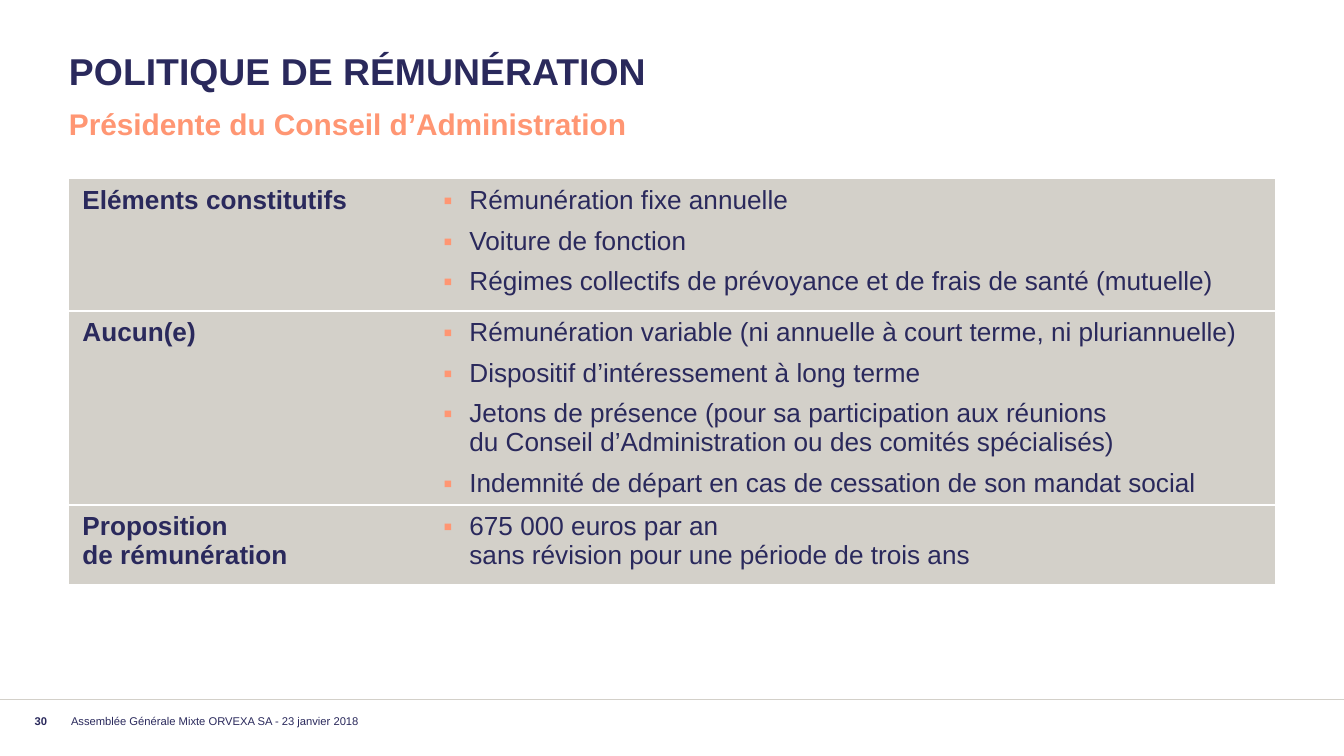
import dataclasses

import lxml.etree
import pptx
import pptx.dml.color
import pptx.enum.shapes
import pptx.enum.text
import pptx.oxml.ns
import pptx.util

PIXELS_PER_INCH = 134.4
ALIGN = pptx.enum.text.PP_ALIGN
ANCHOR = pptx.enum.text.MSO_ANCHOR


@dataclasses.dataclass(frozen=True)
class Theme:
    font: str = "Arial"
    navy: str = "2A295C"
    coral: str = "FF9673"
    sand: str = "D3D0C9"
    white: str = "FFFFFF"
    title_size: int = 20
    subtitle_size: int = 16
    body_size: int = 14
    footer_size: int = 6


THEME = Theme()

ROWS = [
    (132, "Eléments constitutifs", [
        "Rémunération fixe annuelle",
        "Voiture de fonction",
        "Régimes collectifs de prévoyance et de frais de santé (mutuelle)",
    ]),
    (185, "Aucun(e)", [
        "Rémunération variable (ni annuelle à court terme, ni pluriannuelle)",
        "Dispositif d’intéressement à long terme",
        "Jetons de présence (pour sa participation aux réunions \n"
        "du Conseil d’Administration ou des comités spécialisés)",
        "Indemnité de départ en cas de cessation de son mandat social",
    ]),
    (79, "Proposition \nde rémunération", [
        "675 000 euros par an\nsans révision pour une période de trois ans",
    ]),
]


def px(length):
    return pptx.util.Emu(round(length * 914400 / PIXELS_PER_INCH))


def rgb(value):
    return pptx.dml.color.RGBColor.from_string(value)


def add_xml(parent, tag, **attributes):
    return lxml.etree.SubElement(parent, pptx.oxml.ns.qn(tag), attributes)


def write(paragraph, text, size, color=THEME.navy, bold=False):
    for index, line in enumerate(text.split("\n")):
        if index:
            paragraph.add_line_break()
        run = paragraph.add_run()
        run.text = line
        run.font.name = THEME.font
        run.font.size = pptx.util.Pt(size)
        run.font.bold = bold
        run.font.color.rgb = rgb(color)


def format_frame(shape, anchor, align, line_spacing=1.0):
    frame = shape.text_frame
    frame.word_wrap = True
    frame.auto_size = pptx.enum.text.MSO_AUTO_SIZE.NONE
    frame.vertical_anchor = anchor
    frame.margin_left = frame.margin_right = 0
    frame.margin_top = frame.margin_bottom = 0
    paragraph = frame.paragraphs[0]
    paragraph.alignment = align
    paragraph.line_spacing = line_spacing
    return paragraph


def add_text_box(slide, left, top, width, height):
    return slide.shapes.add_textbox(px(left), px(top), px(width), px(height))


def add_heading(slide, left, top, width):
    title = slide.shapes.title
    title.left, title.top = px(left), px(top)
    title.width, title.height = px(width), px(85)
    paragraph = format_frame(title, ANCHOR.TOP, ALIGN.LEFT, 1.1)
    write(paragraph, "POLITIQUE DE RÉMUNÉRATION", THEME.title_size, bold=True)

    subtitle = add_text_box(slide, left, top + 60, width, 85)
    paragraph = format_frame(subtitle, ANCHOR.TOP, ALIGN.LEFT, 1.05)
    write(paragraph, "Présidente du Conseil d’Administration",
          THEME.subtitle_size, THEME.coral, True)


def format_cell(cell, is_first, is_last):
    cell.fill.solid()
    cell.fill.fore_color.rgb = rgb(THEME.sand)
    properties = cell._tc.get_or_add_tcPr()
    edges = [("a:lnL", False), ("a:lnR", False),
             ("a:lnT", not is_first), ("a:lnB", not is_last)]
    for index, (tag, visible) in enumerate(edges):
        edge = add_xml(properties, tag, w=str(pptx.util.Pt(1)))
        if visible:
            add_xml(add_xml(edge, "a:solidFill"), "a:srgbClr", val=THEME.white)
        else:
            add_xml(edge, "a:noFill")
        properties.insert(index, edge)


def add_bullet(paragraph):
    paragraph.space_after = pptx.util.Pt(6)
    properties = paragraph._p.get_or_add_pPr()
    properties.set("marL", str(px(26)))
    properties.set("indent", str(-px(26)))
    add_xml(add_xml(properties, "a:buClr"), "a:srgbClr", val=THEME.coral)
    add_xml(properties, "a:buFont", typeface=THEME.font)
    add_xml(properties, "a:buChar", char="▪")


def add_policy_table(slide, left, top, width):
    height = sum(row[0] for row in ROWS)
    table = slide.shapes.add_table(
        len(ROWS), 2, px(left), px(top), px(width), px(height)).table
    table.first_row = False
    table.horz_banding = False
    label_width = 361
    table.columns[0].width = px(label_width)
    table.columns[1].width = px(width - label_width)
    for index, (row_height, label, items) in enumerate(ROWS):
        table.rows[index].height = px(row_height)
        label_cell, items_cell = table.rows[index].cells
        for cell in (label_cell, items_cell):
            format_cell(cell, index == 0, index == len(ROWS) - 1)
        write(label_cell.text_frame.paragraphs[0], label, THEME.body_size, bold=True)
        frame = items_cell.text_frame
        for position, item in enumerate(items):
            paragraph = frame.add_paragraph() if position else frame.paragraphs[0]
            add_bullet(paragraph)
            write(paragraph, item, THEME.body_size)


def add_footer(slide, left, top, width):
    rule = slide.shapes.add_connector(
        pptx.enum.shapes.MSO_CONNECTOR.STRAIGHT,
        px(left), px(top), px(left + width), px(top))
    rule.line.color.rgb = rgb(THEME.sand)
    rule.line.width = pptx.util.Pt(0.25)
    add_xml(rule._element.spPr, "a:effectLst")

    number = add_text_box(slide, left + 12, top + 12, 35, 17)
    write(format_frame(number, ANCHOR.BOTTOM, ALIGN.RIGHT), "30",
          THEME.footer_size, bold=True)
    event = add_text_box(slide, left + 71, top + 8, 513, 21)
    write(format_frame(event, ANCHOR.BOTTOM, ALIGN.LEFT),
          "Assemblée Générale Mixte ORVEXA SA - 23 janvier 2018", THEME.footer_size)


def main():
    presentation = pptx.Presentation()
    presentation.slide_width = px(1344)
    presentation.slide_height = px(756)
    slide = presentation.slides.add_slide(presentation.slide_layouts[5])
    add_heading(slide, 69, 44, 1206)
    add_policy_table(slide, 69, 179, 1206)
    add_footer(slide, 0, 699, 1344)
    presentation.save("out.pptx")


if __name__ == "__main__":
    main()
